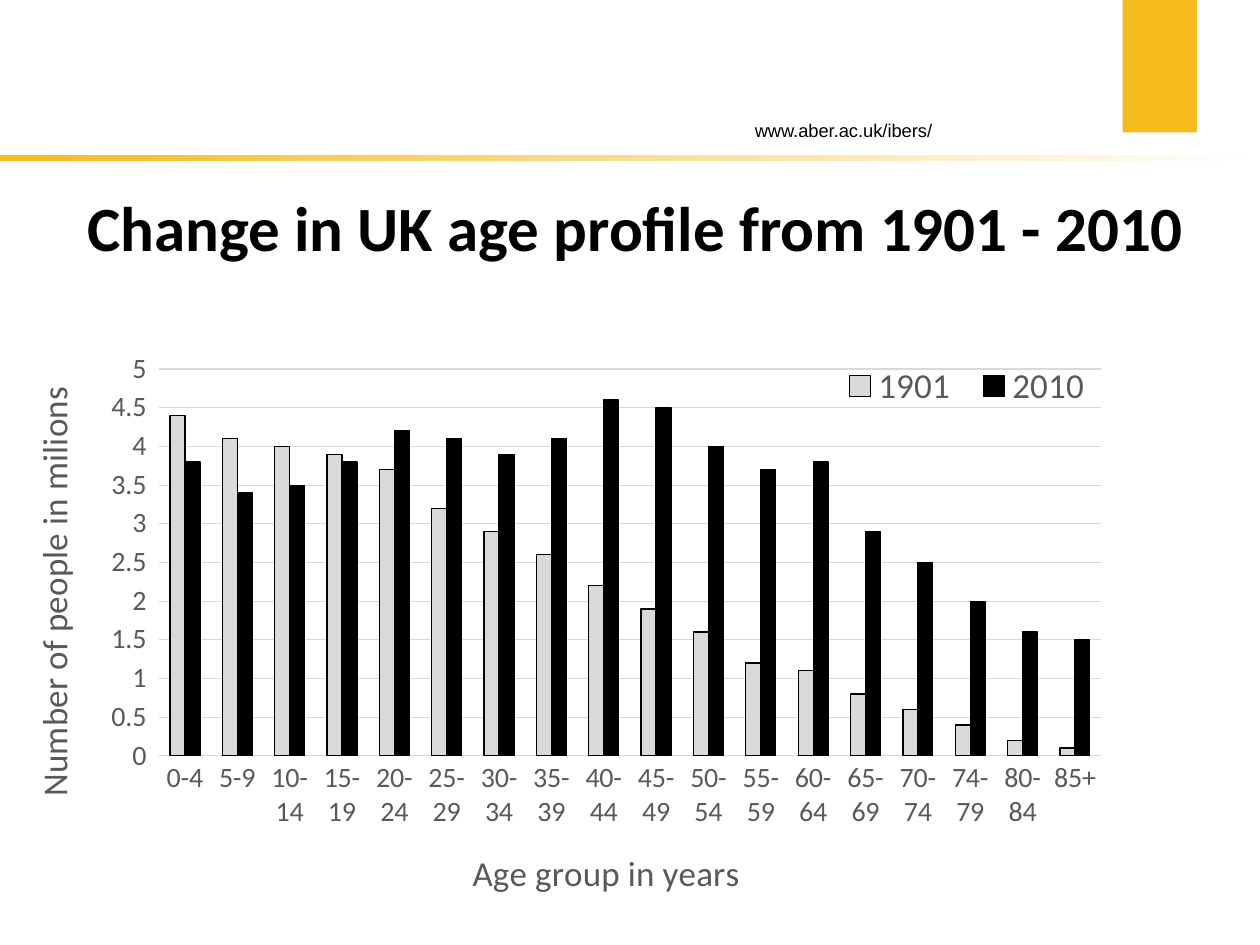
"""Build a slide that compares the UK age profile in 1901 and 2010."""
from dataclasses import dataclass
from typing import Any, NamedTuple, Optional

from pptx import Presentation
from pptx.chart.data import CategoryChartData
from pptx.dml.color import RGBColor
from pptx.enum.chart import XL_CHART_TYPE as ChartType, XL_LEGEND_POSITION as LegendPos
from pptx.enum.chart import XL_TICK_MARK as Tick
from pptx.enum.shapes import MSO_SHAPE as Shape
from pptx.enum.text import PP_ALIGN as Align
from pptx.oxml import parse_xml
from pptx.oxml.ns import nsdecls, qn
from pptx.util import Inches, Pt


@dataclass(frozen=True)
class Theme:
    gold: RGBColor = RGBColor(0xF6, 0xBB, 0x1C)
    white: RGBColor = RGBColor(0xFF, 0xFF, 0xFF)
    black: RGBColor = RGBColor(0, 0, 0)
    label: RGBColor = RGBColor(0x59, 0x59, 0x59)
    pale: RGBColor = RGBColor(0xD9, 0xD9, 0xD9)
    body: str = "Calibri"
    address: str = "Arial"
    heading_size: Pt = Pt(36)
    address_size: Pt = Pt(10.5)
    chart_size: Pt = Pt(10)
    tick_size: Pt = Pt(16)
    caption_size: Pt = Pt(20)
    hairline: Pt = Pt(0.75)


THEME = Theme()


class Box(NamedTuple):
    left: float
    top: float
    width: float
    height: float

    def lengths(self) -> list:
        return [Inches(value) for value in self]


class Label(NamedTuple):
    text: str
    box: Box
    font: dict


class Band(NamedTuple):
    box: Box
    fades: bool


class Year(NamedTuple):
    name: str
    color: RGBColor
    millions: list


class Placement(NamedTuple):
    anchor: str
    left: float
    top: float
    width: Optional[float] = None
    height: Optional[float] = None
    target: str = ""


BANDS = [Band(Box(8.91, 0, 0.59, 1.05), False), Band(Box(0, 1.23, 10, 0.05), True)]
LABELS = [
    Label("www.aber.ac.uk/ibers/", Box(5.47, 0.9, 2.45, 0.28),
          {"name": THEME.address, "size": THEME.address_size, "bold": False}),
    Label("Change in UK age profile from 1901 - 2010", Box(0.29, 1.45, 9.51, 1.25),
          {"name": THEME.body, "size": THEME.heading_size, "bold": True}),
]
AGE_GROUPS = ["0-4", "5-9", "10-14", "15-19", "20-24", "25-29", "30-34", "35-39", "40-44",
              "45-49", "50-54", "55-59", "60-64", "65-69", "70-74", "74-79", "80-84", "85+"]
YEARS = [
    Year("1901", THEME.pale, [4.4, 4.1, 4, 3.9, 3.7, 3.2, 2.9, 2.6, 2.2,
                              1.9, 1.6, 1.2, 1.1, 0.8, 0.6, 0.4, 0.2, 0.1]),
    Year("2010", THEME.black, [3.8, 3.4, 3.5, 3.8, 4.2, 4.1, 3.9, 4.1, 4.6,
                               4.5, 4, 3.7, 3.8, 2.9, 2.5, 2, 1.6, 1.5]),
]
CHART_BOX = Box(0, 2.71, 10, 4.65)
PLACEMENTS = [
    Placement("c:plotArea/c:barChart", 1.26, 0.22, 7.48, 3.07, "inner"),
    Placement("c:legend/c:overlay", 6.57, 0.17, 2.21, 0.37),
    Placement("c:catAx/c:title/c:overlay", 3.7, 3.97),
    Placement("c:valAx/c:title/c:overlay", 0.18, 0.31),
]


def assign(target: Any, values: dict) -> None:
    """Set each named attribute of the target."""
    for name, value in values.items():
        setattr(target, name, value)


def style_font(font: Any, color: RGBColor, **values: Any) -> None:
    """Apply a colour and format values to a font."""
    assign(font, values)
    font.color.rgb = color


def style_line(line: Any, color: RGBColor) -> None:
    """Draw a line as a hairline in one colour."""
    line.color.rgb = color
    line.width = THEME.hairline


def add_band(slide: Any, band: Band) -> None:
    """Draw a gold band, solid or fading to white."""
    shape = slide.shapes.add_shape(Shape.RECTANGLE, *band.box.lengths())
    shape.shadow.inherit = False
    shape.line.fill.background()
    if band.fades:
        shape.fill.gradient()
        shape.fill.gradient_angle = 0
        for stop, color in zip(shape.fill.gradient_stops, (THEME.gold, THEME.white)):
            stop.color.rgb = color
    else:
        shape.fill.solid()
        shape.fill.fore_color.rgb = THEME.gold


def add_label(slide: Any, label: Label) -> None:
    """Write a centred line of text."""
    frame = slide.shapes.add_textbox(*label.box.lengths()).text_frame
    frame.word_wrap = True
    paragraph = frame.paragraphs[0]
    paragraph.text = label.text
    paragraph.alignment = Align.CENTER
    style_font(paragraph.runs[0].font, THEME.black, **label.font)


def style_axis(axis: Any, caption: str, values: dict) -> Any:
    """Format an axis and return the frame of its caption."""
    assign(axis, values)
    style_font(axis.tick_labels.font, THEME.label, name=THEME.body, size=THEME.tick_size)
    frame = axis.axis_title.text_frame
    frame.text = caption
    style_font(frame.paragraphs[0].runs[0].font, THEME.label,
               name=THEME.body, size=THEME.caption_size, bold=False)
    return frame


def place(chart: Any, placement: Placement) -> None:
    """Fix a chart part at a position in inches from the chart corner."""
    anchor = chart._chartSpace.xpath(f".//{placement.anchor}")[0]
    for layout in anchor.getparent().findall(qn("c:layout")):
        anchor.getparent().remove(layout)
    target = f'<c:layoutTarget val="{placement.target}"/>' if placement.target else ""
    modes = '<c:xMode val="edge"/><c:yMode val="edge"/>'
    spans = (CHART_BOX.width, CHART_BOX.height) * 2
    sizes = "".join(f'<c:{tag} val="{length / span}"/>'
                    for tag, length, span in zip("xywh", placement[1:5], spans)
                    if length is not None)
    anchor.addprevious(parse_xml(
        f'<c:layout {nsdecls("c")}><c:manualLayout>{target}{modes}{sizes}'
        "</c:manualLayout></c:layout>"))


def add_age_chart(slide: Any) -> None:
    """Draw the clustered columns for both years."""
    data = CategoryChartData()
    data.categories = AGE_GROUPS
    for year in YEARS:
        data.add_series(year.name, year.millions)
    chart = slide.shapes.add_chart(
        ChartType.COLUMN_CLUSTERED, *CHART_BOX.lengths(), data).chart
    assign(chart, {"has_title": False, "has_legend": True})
    style_font(chart.font, THEME.black, name=THEME.body, size=THEME.chart_size)
    assign(chart.plots[0], {"gap_width": 150, "overlap": 0, "vary_by_categories": False})
    for series, year in zip(chart.plots[0].series, YEARS):
        series.format.fill.solid()
        series.format.fill.fore_color.rgb = year.color
        style_line(series.format.line, THEME.black)
    ages, people = chart.category_axis, chart.value_axis
    style_axis(ages, "Age group in years", {"major_tick_mark": Tick.NONE})
    style_line(ages.format.line, THEME.pale)
    caption = style_axis(people, "Number of people in milions", {
        "minimum_scale": 0, "maximum_scale": 5, "major_unit": 0.5,
        "major_tick_mark": Tick.OUTSIDE, "has_major_gridlines": True})
    caption._txBody.bodyPr.set("rot", "-5400000")
    people.format.line.fill.background()
    style_line(people.major_gridlines.format.line, THEME.pale)
    assign(chart.legend, {"position": LegendPos.RIGHT, "include_in_layout": False})
    style_font(chart.legend.font, THEME.label, name=THEME.body, size=THEME.caption_size)
    for placement in PLACEMENTS:
        place(chart, placement)


def main() -> None:
    """Assemble and save the slide."""
    deck = Presentation()
    assign(deck, {"slide_width": Inches(10), "slide_height": Inches(7.5)})
    slide = deck.slides.add_slide(deck.slide_layouts[6])
    for band in BANDS:
        add_band(slide, band)
    for label in LABELS:
        add_label(slide, label)
    add_age_chart(slide)
    deck.save("out.pptx")


if __name__ == "__main__":
    main()
